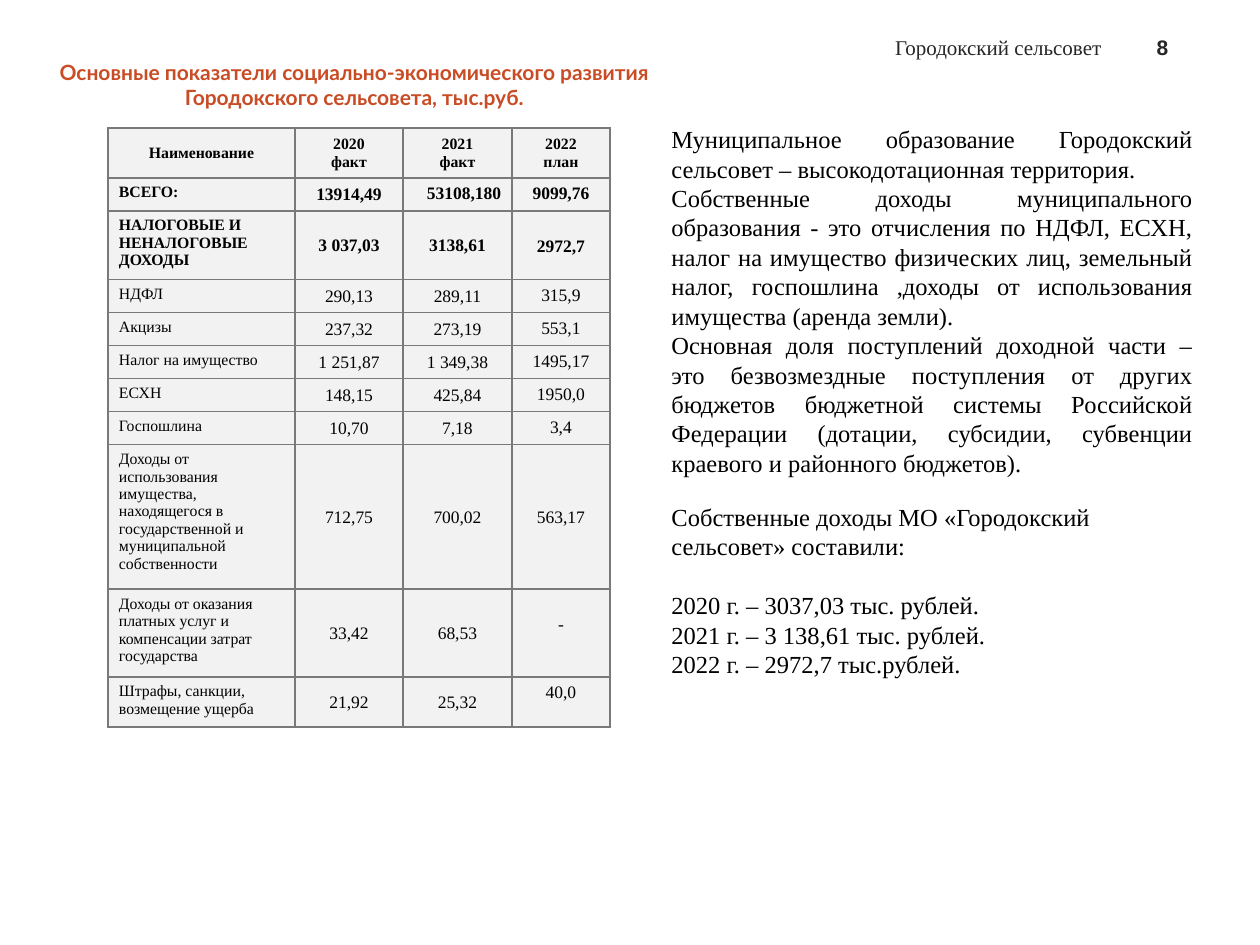
from lxml.etree import SubElement
from pptx import Presentation
from pptx.dml.color import RGBColor
from pptx.enum.text import MSO_ANCHOR as Anchor, MSO_AUTO_SIZE as AutoSize, PP_ALIGN as Align
from pptx.oxml.ns import qn
from pptx.util import Emu, Pt

SERIF = "Times New Roman"
BLACK, DARK, ORANGE, CELL_FILL, BORDER = "000000", "262626", "C94C25", "F2F2F2", "797979"

# Content
TITLE = "Основные показатели социально-экономического развития\vГородокского сельсовета, тыс.руб."
HEADER = [  # text, left, width, alignment, font, bold
    ("Городокский сельсовет", 809, 305, Align.RIGHT, SERIF, False),
    ("8", 1128, 69, Align.CENTER, "Arial", True),
]
COLUMN_WIDTHS = [187, 108, 109, 98]
ROWS = [  # height, cells
    (47, ["Наименование", "2020\nфакт", "2021\nфакт", "2022\nплан"]),
    (31, ["ВСЕГО:", "13914,49", "53108,180", "9099,76"]),
    (63, ["НАЛОГОВЫЕ И НЕНАЛОГОВЫЕ ДОХОДЫ", "3 037,03", "3138,61", "2972,7"]),
    (33, ["НДФЛ", "290,13", "289,11", "315,9"]),
    (31, ["Акцизы", "237,32", "273,19", "553,1"]),
    (31, ["Налог на имущество", "1 251,87", "1 349,38", "1495,17"]),
    (31, ["ЕСХН", "148,15", "425,84", "1950,0"]),
    (30, ["Госпошлина", "10,70", "7,18", "3,4"]),
    (134, ["Доходы от использования имущества, находящегося в государственной "
           "и муниципальной собственности", "712,75", "700,02", "563,17"]),
    (81, ["Доходы от оказания платных услуг и компенсации затрат государства",
          "33,42", "68,53", "-"]),
    (47, ["Штрафы, санкции, возмещение ущерба", "21,92", "25,32", "40,0"]),
]
BOLD_ROWS = 3
TOTAL_2021 = (1, 2)  # the one right-aligned figure
PLAN_TOP_MARGINS = {2: 26, 8: 63, 9: 26}  # lowered figures in the plan column
BODY = [  # text, alignment, space before in points
    ("Муниципальное образование Городокский сельсовет – высокодотационная территория.",
     Align.JUSTIFY, 0),
    ("Собственные доходы муниципального образования - это отчисления по НДФЛ, ЕСХН, налог на "
     "имущество физических лиц, земельный налог, госпошлина ,доходы от использования "
     "имущества (аренда земли).", Align.JUSTIFY, 0),
    ("Основная доля поступлений доходной части – это безвозмездные поступления от других "
     "бюджетов бюджетной системы Российской Федерации (дотации, субсидии, субвенции "
     "краевого и районного бюджетов).", Align.JUSTIFY, 0),
    ("Собственные доходы МО «Городокский сельсовет» составили:", Align.LEFT, 14),
    ("2020 г. – 3037,03 тыс. рублей.", Align.LEFT, 17),
    ("2021 г. – 3 138,61 тыс. рублей.", Align.LEFT, 0),
    ("2022 г. – 2972,7 тыс.рублей.", Align.LEFT, 0),
]


def px(value):
    return Emu(round(value * 914400 / 126))


def color(value):
    return RGBColor.from_string(value)


def style(paragraph, size, font=SERIF, fill=BLACK, bold=False, align=Align.LEFT):
    paragraph.alignment = align
    paragraph.font.name = font
    paragraph.font.size = Pt(size)
    paragraph.font.bold = bold
    paragraph.font.color.rgb = color(fill)


def set_margins(target, left, top, right, bottom):
    target.margin_left, target.margin_top = px(left), px(top)
    target.margin_right, target.margin_bottom = px(right), px(bottom)


def add_text_frame(slide, left, top, width, height):
    frame = slide.shapes.add_textbox(px(left), px(top), px(width), px(height)).text_frame
    frame.word_wrap = True
    return frame


def add_borders(cell):
    properties = cell._tc.get_or_add_tcPr()
    for side in ("a:lnL", "a:lnR", "a:lnT", "a:lnB"):
        line = SubElement(properties, qn(side), w=str(Pt(1)))
        fill = SubElement(line, qn("a:solidFill"))
        SubElement(fill, qn("a:srgbClr"), val=BORDER)


def format_cell(cell, row, column, text):
    add_borders(cell)
    cell.fill.solid()
    cell.fill.fore_color.rgb = color(CELL_FILL)
    compact = row > 0 and column in (1, 2) and (row, column) != TOTAL_2021
    if compact:
        set_margins(cell, 1, 1, 1, 0)
    else:
        top = PLAN_TOP_MARGINS.get(row, 6) if column == 3 else 6
        set_margins(cell, 11, top, 11, 6)
    cell.vertical_anchor = Anchor.MIDDLE if compact or row == 0 else Anchor.TOP
    align = Align.LEFT if column == 0 and row > 0 else Align.CENTER
    if (row, column) == TOTAL_2021:
        align = Align.RIGHT
    cell.text_frame.text = text
    for paragraph in cell.text_frame.paragraphs:
        style(paragraph, 9 if row == 0 or column == 0 else 10, bold=row < BOLD_ROWS, align=align)


presentation = Presentation()
presentation.slide_width, presentation.slide_height = px(1260), px(945)
slide = presentation.slides.add_slide(presentation.slide_layouts[5])

# Title
title = slide.shapes.title
title.left, title.top, title.width, title.height = px(5), px(55), px(674), px(59)
title_frame = title.text_frame
title_frame.text = TITLE
title_frame.auto_size = AutoSize.NONE
title_frame.word_wrap = True
title_frame.vertical_anchor = Anchor.MIDDLE
set_margins(title_frame, 25, 6, 0, 6)
style(title_frame.paragraphs[0], 12, "Lato", ORANGE, True, Align.CENTER)

# Running header and page number
for text, left, width, align, font, bold in HEADER:
    frame = add_text_frame(slide, left, 24, width, 42)
    frame.vertical_anchor = Anchor.BOTTOM
    frame.text = text
    style(frame.paragraphs[0], 12, font, DARK, bold, align)

# Table of indicators
table = slide.shapes.add_table(
    len(ROWS), len(COLUMN_WIDTHS), px(108), px(128),
    px(sum(COLUMN_WIDTHS)), px(sum(height for height, _ in ROWS))).table
table.first_row = table.horz_banding = False
for column, width in enumerate(COLUMN_WIDTHS):
    table.columns[column].width = px(width)
for row, (height, texts) in enumerate(ROWS):
    table.rows[row].height = px(height)
    for column, text in enumerate(texts):
        format_cell(table.cell(row, column), row, column, text)

# Commentary
body = add_text_frame(slide, 659, 118, 546, 572)
body.text = "\n".join(text for text, _, _ in BODY)
for paragraph, (_, align, space) in zip(body.paragraphs, BODY):
    style(paragraph, 14, align=align)
    if space:
        paragraph.space_before = Pt(space)

presentation.save("out.pptx")
